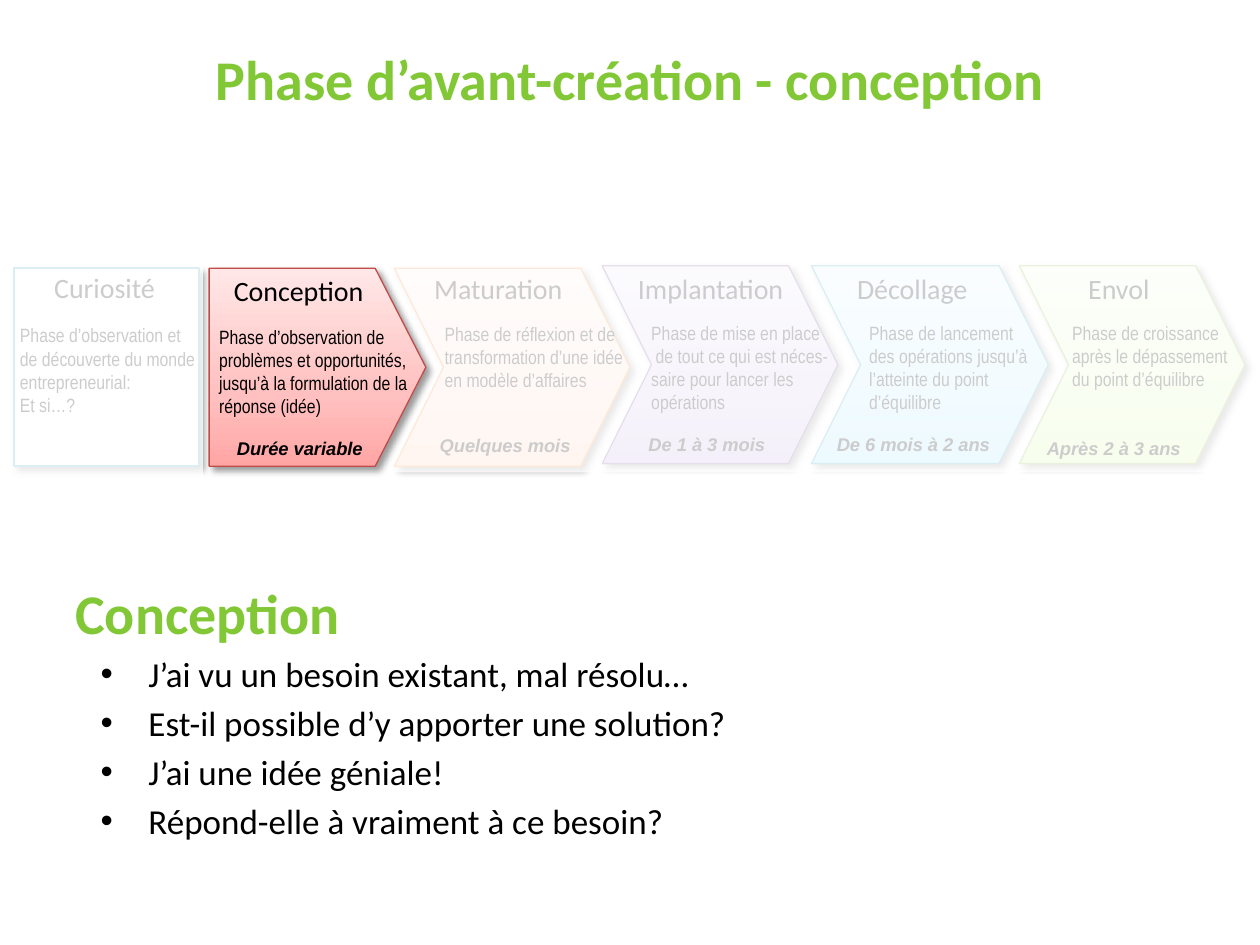
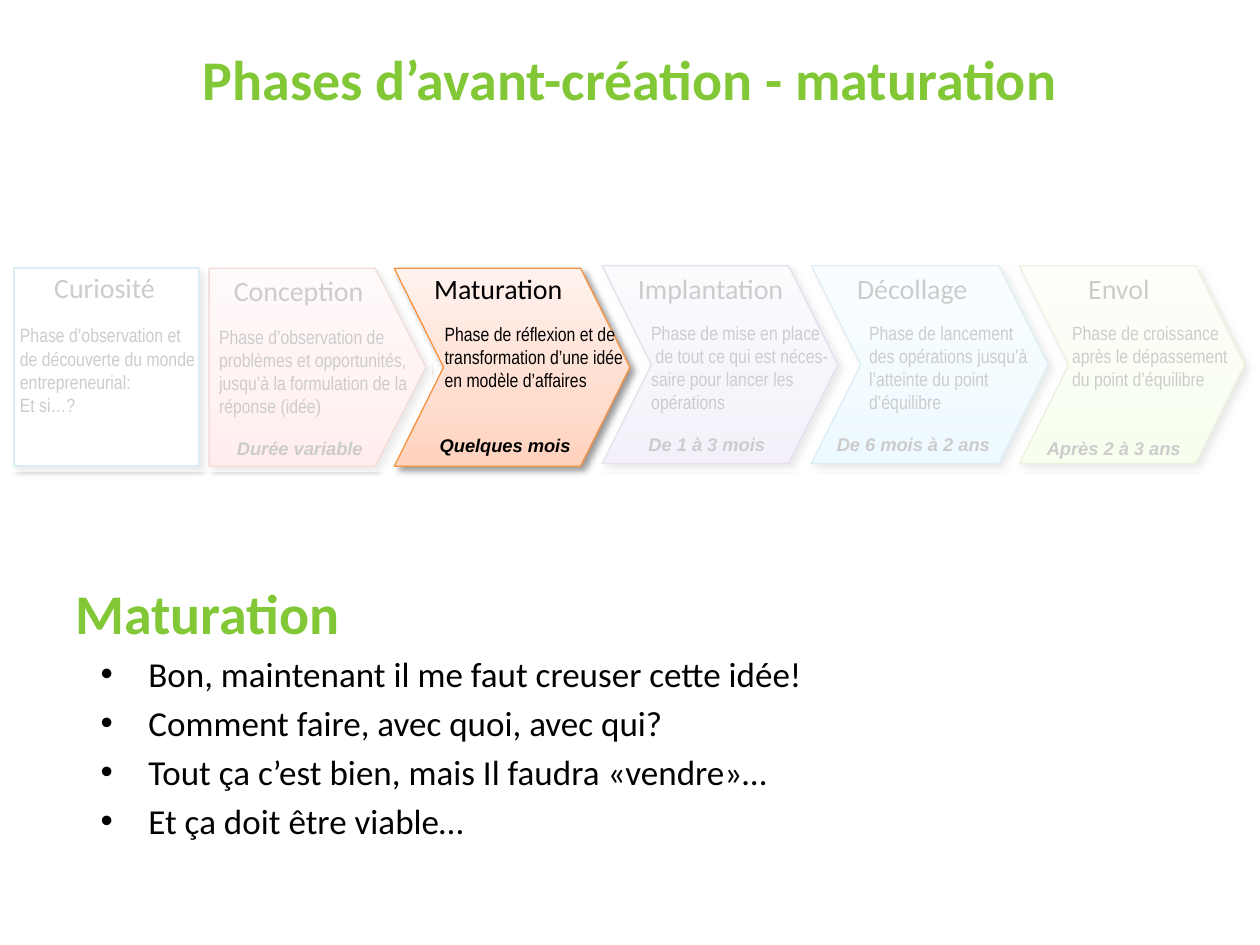
import collections
import copy

import lxml.etree
import pptx
import pptx.dml.color
import pptx.enum.shapes
import pptx.enum.text
import pptx.oxml.ns
import pptx.util

Inches = pptx.util.Inches
Pt = pptx.util.Pt
rgb = pptx.dml.color.RGBColor.from_string
qn = pptx.oxml.ns.qn
ALIGN = pptx.enum.text.PP_ALIGN
SHAPE = pptx.enum.shapes.MSO_SHAPE

# Colours and text styles: font, size, bold, italic, colour
Style = collections.namedtuple("Style", "font size bold italic color")
THEME = {
    "title": Style("Calibri", 32, True, False, "82C836"),
    "bullet": Style("Calibri", 20, False, False, "000000"),
    "phase": Style("Calibri", 16, False, False, "000000"),
    "detail": Style("Arial Narrow", 11, False, False, "000000"),
    "duration": Style("Arial", 10.5, True, True, "000000"),
    "veil": "FFFFFF",
    "shadow": "000000",
}

# Phases: outline, its colours from bottom to top, then (text, left, top, width, height)
Phase = collections.namedtuple("Phase", "preset point at colors line name detail duration")
PHASES = [
    Phase(SHAPE.RECTANGLE, None, (0.11, 2.13, 1.47, 1.57), ["FFFFFF"], "4BACC6",
          ("Curiosité", 0.18, 2.1, 1.3, 0.37),
          ("Phase d’observation et de découverte du monde entrepreneurial:\nEt si…?",
           0.06, 2.52, 1.61, 0.84),
          None),
    Phase(SHAPE.PENTAGON, 0.256, (1.66, 2.13, 1.72, 1.57),
          ["FFA6A5", "FFC0BF", "FFE7E7"], "BF4C48",
          ("Conception", 1.72, 2.12, 1.3, 0.37),
          ("Phase d’observation de problèmes et opportunités, "
           "jusqu’à la formulation de la réponse (idée)", 1.64, 2.53, 1.72, 0.84),
          ("Durée variable", 1.77, 3.42, 1.22, 0.28)),
    Phase(SHAPE.CHEVRON, 0.249, (3.13, 2.13, 1.87, 1.57),
          ["FFD2BD", "FFDED0", "FFF2ED"], "F69240",
          ("Maturation", 3.16, 2.11, 1.59, 0.37),
          ("Phase de réflexion et de transformation d’une idée en modèle d’affaires",
           3.43, 2.51, 1.72, 0.66),
          ("Quelques mois", 3.38, 3.4, 1.26, 0.28)),
    Phase(SHAPE.CHEVRON, 0.249, (4.78, 2.11, 1.87, 1.57),
          ["C9B5E8", "D8CBEE", "F0EAF9"], "7D60A0",
          ("Implantation", 4.85, 2.11, 1.58, 0.37),
          ("Phase de mise en place\v de tout ce qui est néces-saire pour lancer les opérations",
           5.07, 2.5, 1.72, 0.84),
          ("De 1 à 3 mois", 5.04, 3.39, 1.14, 0.28)),
    Phase(SHAPE.CHEVRON, 0.249, (6.44, 2.11, 1.88, 1.57),
          ["A7E6FF", "C1EDFF", "E7F8FF"], "46AAC5",
          ("Décollage", 6.45, 2.11, 1.58, 0.37),
          ("Phase de lancement\vdes opérations jusqu’à l’atteinte du point d’équilibre",
           6.8, 2.5, 1.57, 0.84),
          ("De 6 mois à 2 ans", 6.53, 3.39, 1.44, 0.28)),
    Phase(SHAPE.CHEVRON, 0.249, (8.09, 2.11, 1.79, 1.57),
          ["DAFDA7", "E4FCC2", "F5FFE7"], "98B955",
          ("Envol", 8.09, 2.11, 1.58, 0.37),
          ("Phase de croissance\vaprès le dépassement\vdu point d’équilibre",
           8.41, 2.5, 1.48, 0.66),
          ("Après 2 à 3 ans", 8.2, 3.42, 1.28, 0.28)),
]

# Slides: title, highlighted phase, areas faded by a veil, bullets
Page = collections.namedtuple("Page", "title active veils bullets")
PAGES = [
    Page("Phase d’avant-création - conception", "Conception",
         [(3.11, 2.02, 6.89, 1.73), (0.04, 2.1, 1.57, 1.73)],
         ["J’ai vu un besoin existant, mal résolu…",
          "Est-il possible d’y apporter une solution?",
          "J’ai une idée géniale!",
          "Répond-elle à vraiment à ce besoin?"]),
    Page("Phases d’avant-création - maturation", "Maturation",
         [(4.76, 2.02, 5.24, 1.73), (0, 2.02, 3.43, 1.73)],
         ["Bon, maintenant il me faut creuser cette idée!",
          "Comment faire, avec quoi, avec qui?",
          "Tout ça c’est bien, mais Il faudra «vendre»…",
          "Et ça doit être viable…"]),
]


def format_para(para, style, align=ALIGN.LEFT):
    para.alignment = align
    for span in para.runs:
        span.font.name = style.font
        span.font.size = Pt(style.size)
        span.font.bold = style.bold
        span.font.italic = style.italic
        span.font.color.rgb = rgb(style.color)


def draw_phase(page, phase):
    group = page.shapes.add_group_shape()

    # Outline and fill
    outline = group.shapes.add_shape(phase.preset, *map(Inches, phase.at))
    if phase.point:
        outline.adjustments[0] = phase.point
    if len(phase.colors) == 1:
        outline.fill.solid()
        outline.fill.fore_color.rgb = rgb(phase.colors[0])
    else:
        outline.fill.gradient()
        outline.fill.gradient_angle = 90
        stop_list = outline.element.spPr.find(".//" + qn("a:gsLst"))
        stop_list.insert(1, copy.deepcopy(stop_list[0]))
        stops = zip(outline.fill.gradient_stops, (0, 0.35, 1), phase.colors)
        for stop, position, color in stops:
            stop.position = position
            stop.color.rgb = rgb(color)
    outline.line.color.rgb = rgb(phase.line)
    outline.line.width = Pt(0.75 if phase.point else 1)

    # Soft shadow to the lower right
    outline.shadow.inherit = False
    effects = outline.element.spPr.find(qn("a:effectLst"))
    shadow = lxml.etree.SubElement(
        effects, qn("a:outerShdw"), blurRad=str(Pt(4)), dist=str(Pt(3)),
        dir="2700000", algn="tl", rotWithShape="0")
    tint = lxml.etree.SubElement(shadow, qn("a:srgbClr"), val=THEME["shadow"])
    lxml.etree.SubElement(tint, qn("a:alpha"), val="40000")

    # Name, detail and duration
    for role, align in (("phase", ALIGN.CENTER), ("detail", ALIGN.LEFT),
                        ("duration", ALIGN.CENTER)):
        label = phase.name if role == "phase" else getattr(phase, role)
        if label is None:
            continue
        text, *at = label
        box = group.shapes.add_textbox(*map(Inches, at))
        box.text_frame.word_wrap = role != "duration"
        box.text_frame.text = text
        for para in box.text_frame.paragraphs:
            format_para(para, THEME[role], align)


deck = pptx.Presentation()
deck.slide_width = Inches(10)
deck.slide_height = Inches(7.5)

for content in PAGES:
    page = deck.slides.add_slide(deck.slide_layouts[5])

    # Title
    title = page.shapes.title
    title.left, title.top, title.width, title.height = map(Inches, (0.5, 0.3, 9, 0.64))
    title.text_frame.text = content.title
    title.text_frame.vertical_anchor = pptx.enum.text.MSO_ANCHOR.MIDDLE
    format_para(title.text_frame.paragraphs[0], THEME["title"], ALIGN.CENTER)

    # Heading and bullets
    body = page.shapes.add_textbox(*map(Inches, (0.5, 4.54, 9, 2.16)))
    body.text_frame.word_wrap = True
    body.text_frame.text = "\n".join([content.active] + content.bullets)
    heading, *bullets = body.text_frame.paragraphs
    format_para(heading, THEME["title"])
    for para in bullets:
        para.space_before = Pt(4)
        props = para._p.get_or_add_pPr()
        props.set("marL", str(Inches(0.58)))
        props.set("indent", str(Inches(-0.38)))
        lxml.etree.SubElement(props, qn("a:buFont"), typeface="Arial")
        lxml.etree.SubElement(props, qn("a:buChar"), char="•")
        format_para(para, THEME["bullet"])

    # Faded phases
    for phase in PHASES:
        if phase.name[0] != content.active:
            draw_phase(page, phase)
    for area in content.veils:
        veil = page.shapes.add_shape(SHAPE.RECTANGLE, *map(Inches, area))
        veil.shadow.inherit = False
        veil.line.fill.background()
        veil.fill.solid()
        veil.fill.fore_color.rgb = rgb(THEME["veil"])
        tint = veil.element.spPr.find(".//" + qn("a:srgbClr"))
        lxml.etree.SubElement(tint, qn("a:alpha"), val="80000")

    # Highlighted phase on top
    draw_phase(page, next(phase for phase in PHASES if phase.name[0] == content.active))

deck.save("out.pptx")
